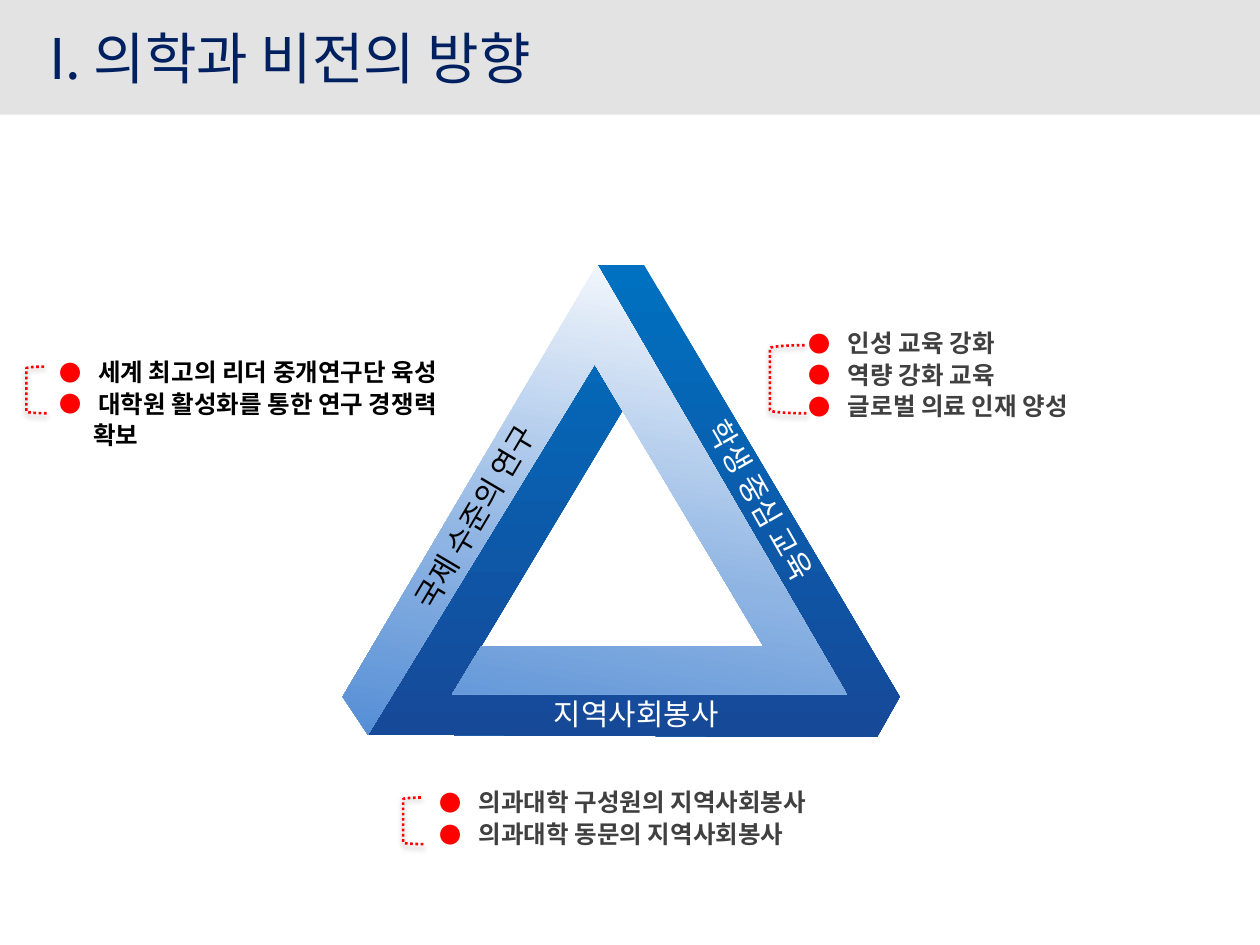
from dataclasses import dataclass

from lxml.etree import SubElement
from pptx import Presentation
from pptx.dml.color import RGBColor
from pptx.enum.dml import MSO_LINE_DASH_STYLE as Dash
from pptx.enum.shapes import MSO_SHAPE as Shape
from pptx.enum.text import MSO_ANCHOR as Anchor, MSO_AUTO_SIZE as AutoSize, PP_ALIGN as Align
from pptx.oxml.ns import qn
from pptx.util import Inches, Pt


@dataclass(frozen=True)
class Theme:
    font: str = "Noto Sans CJK KR"
    title_size: int = 32
    list_size: int = 14
    side_size: int = 17
    navy: str = "002060"
    gray: str = "404040"
    black: str = "000000"
    white: str = "FFFFFF"
    red: str = "FF0000"
    band: str = "DDDDDD"
    dark_ribbon: tuple = ((0, "0070C0"), (100, "174999"))
    light_ribbon: tuple = ((0, "FFFFFF"), (62, "8EB4E3"), (100, "558ED5"))


THEME = Theme()
COMPARISON_LAYOUT = 4
LIST_INDENT = 0.31
CONTINUED_INDENT = 0.27


def add_node(parent, tag, **attributes):
    return SubElement(parent, qn(tag), {name: str(value) for name, value in attributes.items()})


def place(box, left, top, width, height):
    box.left, box.top, box.width, box.height = map(Inches, (left, top, width, height))


def add_bullet(para, bulleted):
    properties = para._p.get_or_add_pPr()
    margin = LIST_INDENT if bulleted else CONTINUED_INDENT
    properties.set("marL", str(Inches(margin)))
    properties.set("indent", str(-Inches(LIST_INDENT) if bulleted else 0))
    if bulleted:
        add_node(add_node(properties, "a:buClr"), "a:srgbClr", val=THEME.red)
        add_node(properties, "a:buSzPct", val=90000)
        add_node(properties, "a:buFont", typeface=THEME.font)
        add_node(properties, "a:buChar", char="●")
    else:
        add_node(properties, "a:buNone")


def write_text(box, lines, size, color, bold=False, align=Align.LEFT, bullets=None, spacing=None):
    frame = box.text_frame
    frame.word_wrap = True
    frame.auto_size = AutoSize.NONE
    frame.vertical_anchor = Anchor.MIDDLE
    for number, line in enumerate(lines):
        para = frame.add_paragraph() if number else frame.paragraphs[0]
        if bullets is not None:
            add_bullet(para, number < bullets)
        para.alignment = align
        para.space_before = Pt(4 if number else 0)
        if spacing:
            para.line_spacing = spacing
        span = para.add_run()
        span.text = line
        span.font.size = Pt(size)
        span.font.bold = bold
        span.font.name = THEME.font
        span.font.color.rgb = RGBColor.from_string(color)
        add_node(span._r.get_or_add_rPr(), "a:ea", typeface=THEME.font)


def add_header_band(page):
    band = page.shapes.add_shape(Shape.RECTANGLE, 0, 0, Inches(10), Inches(0.91))
    band.shadow.inherit = False
    band.line.fill.background()
    band.fill.solid()
    band.fill.fore_color.rgb = RGBColor.from_string(THEME.band)
    color = band._element.spPr.find(".//" + qn("a:srgbClr"))
    add_node(color, "a:alpha", val=80000)
    page.shapes._spTree.insert(2, band._element)


def add_ribbon(page, points, stops, angle):
    start, *rest = [(Inches(x), Inches(y)) for x, y in points]
    builder = page.shapes.build_freeform(*start)
    builder.add_line_segments(rest, close=True)
    ribbon = builder.convert_to_shape()
    ribbon.shadow.inherit = False
    ribbon.line.fill.background()
    ribbon.fill.gradient()
    ribbon.fill.gradient_angle = 360 - angle
    stop_list = ribbon._element.spPr.find(".//" + qn("a:gsLst"))
    for old in list(stop_list):
        stop_list.remove(old)
    for position, color in stops:
        stop = add_node(stop_list, "a:gs", pos=position * 1000)
        add_node(stop, "a:srgbClr", val=color)


def add_list(box, area, lines, color, bullets):
    place(box, *area)
    write_text(box, lines, THEME.list_size, color, bold=True, bullets=bullets, spacing=0.83)


def add_side_label(page, text, area, color, rotation=0):
    box = page.shapes.add_textbox(*map(Inches, area))
    box.rotation = rotation
    write_text(box, [text], THEME.side_size, color, align=Align.CENTER)


def add_bracket(page, left, top, width, height):
    bracket = page.shapes.add_shape(Shape.LEFT_BRACKET, *map(Inches, (left, top, width, height)))
    bracket.fill.background()
    bracket.line.color.rgb = RGBColor.from_string(THEME.red)
    bracket.line.width = Pt(1.5)
    bracket.line.dash_style = Dash.ROUND_DOT
    bracket.shadow.inherit = False
    effects = bracket._element.spPr.find(qn("a:effectLst"))
    shadow = add_node(effects, "a:outerShdw", blurRad=Pt(3.1), dist=Pt(1.8), dir=5400000, rotWithShape=0)
    add_node(add_node(shadow, "a:srgbClr", val=THEME.black), "a:alpha", val=35000)


def main():
    deck = Presentation()
    deck.slide_width, deck.slide_height = Inches(10), Inches(7.5)
    page = deck.slides.add_slide(deck.slide_layouts[COMPARISON_LAYOUT])
    title, education, research, service, unused = page.placeholders
    unused._element.getparent().remove(unused._element)

    add_header_band(page)
    place(title, 0.29, 0.16, 9.37, 0.59)
    write_text(title, ["I. 의학과 비전의 방향"], THEME.title_size, THEME.navy)

    apex, inner_apex = (4.74, 2.1), (4.72, 2.89)
    inner_left, inner_right = (3.59, 5.51), (6.72, 5.51)
    dark = [apex, (5.11, 2.1), (7.14, 5.53), (6.96, 5.85), (2.92, 5.83),
            inner_apex, (4.94, 3.26), inner_left, inner_right]
    light = [(3.82, 5.13), inner_left, inner_right, apex, (2.72, 5.53),
             (2.92, 5.83), inner_apex, (6.06, 5.13)]
    add_ribbon(page, dark, THEME.dark_ribbon, 90)
    add_ribbon(page, light, THEME.light_ribbon, 100)

    add_list(education, (6.32, 2.25, 3.33, 1.48),
             ["인성 교육 강화", "역량 강화 교육", "글로벌 의료 인재 양성"], THEME.gray, 3)
    add_list(research, (0.37, 2.6, 3.83, 1.24),
             ["세계 최고의 리더 중개연구단 육성", "대학원 활성화를 통한 연구 경쟁력", "확보"], THEME.black, 2)
    add_list(service, (3.39, 5.99, 3.75, 1.04),
             ["의과대학 구성원의 지역사회봉사", "의과대학 동문의 지역사회봉사"], THEME.gray, 2)

    add_side_label(page, "국제 수준의 연구", (2.32, 3.91, 2.89, 0.38), THEME.black, 300.6)
    add_side_label(page, "학생 중심 교육", (4.3, 3.78, 3.48, 0.38), THEME.white, 60.4)
    add_side_label(page, "지역사회봉사", (3.28, 5.47, 3.54, 0.38), THEME.white)

    for area in ((3.2, 6.33, 0.16, 0.37), (6.11, 2.74, 0.29, 0.54), (0.21, 2.91, 0.16, 0.37)):
        add_bracket(page, *area)

    deck.save("out.pptx")


if __name__ == "__main__":
    main()
